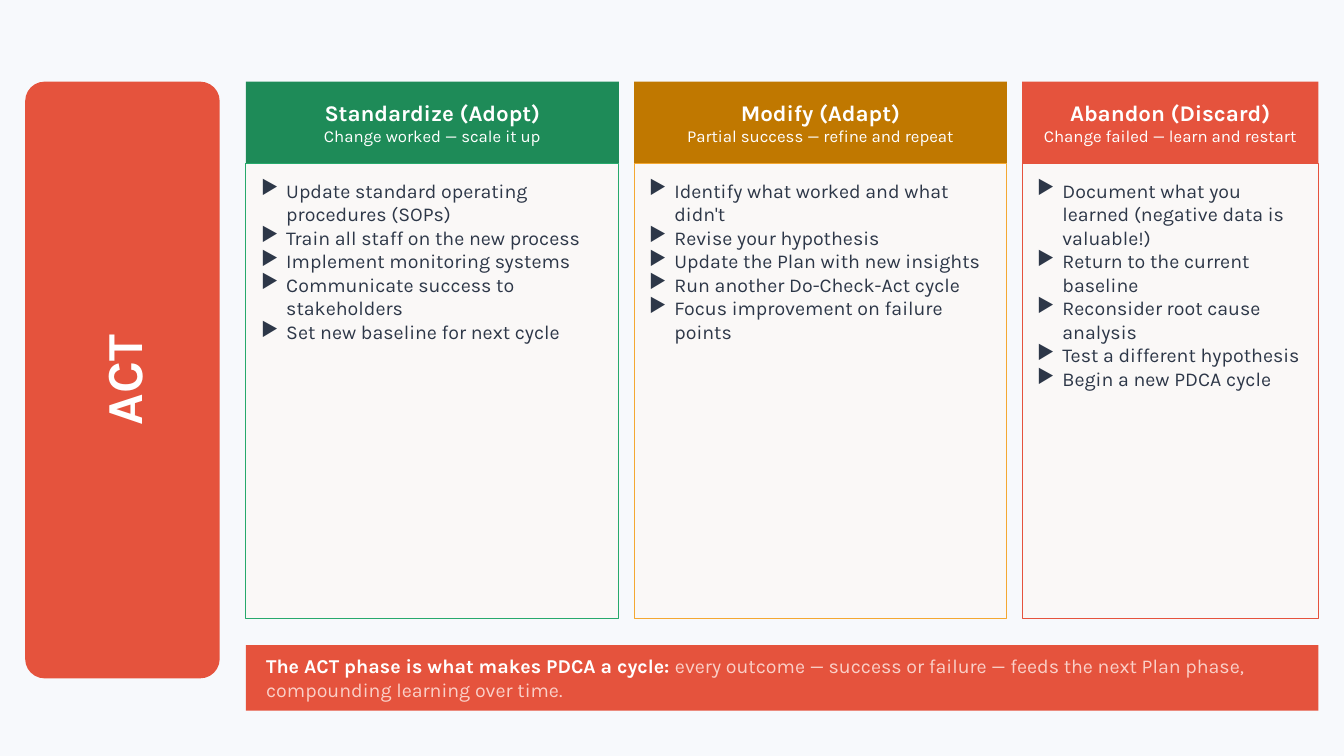
import pptx
import pptx.dml.color
import pptx.enum.shapes
import pptx.enum.text
import pptx.oxml.ns
import pptx.util
from lxml import etree

Pt = pptx.util.Pt
SHAPES = pptx.enum.shapes.MSO_SHAPE
ALIGN = pptx.enum.text.PP_ALIGN
ANCHOR = pptx.enum.text.MSO_ANCHOR

RED, WHITE, INK, PANEL = "E5533D", "FFFFFF", "2D3748", "FAF8F7"
TOP, HEADER_HEIGHT, BODY_HEIGHT = 58.32, 58.32, 325.44
COLUMN_LEFT, COLUMN_GAP, RIGHT_EDGE = 175.68, 10.8, 941.76


def add_box(kind, bounds, fill, margins, anchor, line=None):
    """Add a filled shape; margins are (horizontal, vertical)."""
    box = slide.shapes.add_shape(kind, *[Pt(value) for value in bounds])
    box.shadow.inherit = False
    box.fill.solid()
    box.fill.fore_color.rgb = pptx.dml.color.RGBColor.from_string(fill)
    if line:
        box.line.color.rgb = pptx.dml.color.RGBColor.from_string(line)
        box.line.width = Pt(0.72)
    else:
        box.line.fill.background()
    across, down = margins
    frame_format = {
        "margin_left": Pt(across), "margin_right": Pt(across),
        "margin_top": Pt(down), "margin_bottom": Pt(down),
        "vertical_anchor": anchor, "word_wrap": True,
    }
    for name, value in frame_format.items():
        setattr(box.text_frame, name, value)
    return box


def add_span(para, text, size, color, bold=False):
    span = para.add_run()
    span.text = text
    for name, value in {"name": "Karla", "size": Pt(size), "bold": bold}.items():
        setattr(span.font, name, value)
    span.font.color.rgb = pptx.dml.color.RGBColor.from_string(color)


deck = pptx.Presentation()
deck.slide_width, deck.slide_height = Pt(960), Pt(540)
slide = deck.slides.add_slide(deck.slide_layouts[6])
slide.background.fill.solid()
slide.background.fill.fore_color.rgb = pptx.dml.color.RGBColor.from_string("F7F9FC")

# Phase label
phase = add_box(SHAPES.ROUNDED_RECTANGLE, (18, TOP, 138.96, 426.24), RED, (0, 0), ANCHOR.MIDDLE)
phase.adjustments[0] = 0.1
phase.text_frame._txBody.bodyPr.set("vert", "vert270")
para = phase.text_frame.paragraphs[0]
para.alignment = ALIGN.CENTER
add_span(para, "ACT", 36, WHITE, True)

# Outcome columns: title, subtitle, header fill, border, width, actions
outcomes = [
    ("Standardize (Adopt)", "Change worked — scale it up", "1E8B58", "27A96C", 266.4, [
        "Update standard operating procedures (SOPs)",
        "Train all staff on the new process",
        "Implement monitoring systems",
        "Communicate success to stakeholders",
        "Set new baseline for next cycle",
    ]),
    ("Modify (Adapt)", "Partial success — refine and repeat", "C07800", "F4A832", 266.4, [
        "Identify what worked and what didn't",
        "Revise your hypothesis",
        "Update the Plan with new insights",
        "Run another Do-Check-Act cycle",
        "Focus improvement on failure points",
    ]),
    ("Abandon (Discard)", "Change failed — learn and restart", RED, RED, 211.68, [
        "Document what you learned (negative data is valuable!)",
        "Return to the current baseline",
        "Reconsider root cause analysis",
        "Test a different hypothesis",
        "Begin a new PDCA cycle",
    ]),
]
left = COLUMN_LEFT
for title, subtitle, header_fill, border, width, actions in outcomes:
    header = add_box(SHAPES.RECTANGLE, (left, TOP, width, HEADER_HEIGHT),
                     header_fill, (7.2, 0), ANCHOR.MIDDLE)
    frame = header.text_frame
    title_para, subtitle_para = frame.paragraphs[0], frame.add_paragraph()
    title_para.alignment = subtitle_para.alignment = ALIGN.CENTER
    add_span(title_para, title, 16, WHITE, True)
    add_span(subtitle_para, subtitle, 12, WHITE)

    body = add_box(SHAPES.RECTANGLE, (left, TOP + HEADER_HEIGHT, width, BODY_HEIGHT),
                   PANEL, (10.8, 10.8), ANCHOR.TOP, border)
    frame = body.text_frame
    for index, action in enumerate(actions):
        para = frame.add_paragraph() if index else frame.paragraphs[0]
        para.alignment = ALIGN.LEFT
        properties = para._p.get_or_add_pPr()
        properties.set("marL", str(Pt(18)))
        properties.set("indent", str(-Pt(18)))
        bullet = etree.SubElement(properties, pptx.oxml.ns.qn("a:buChar"))
        bullet.set("char", "▶")
        add_span(para, action, 14, INK)
    left += width + COLUMN_GAP

# Takeaway banner
banner = add_box(SHAPES.RECTANGLE, (COLUMN_LEFT, 460.8, RIGHT_EDGE - COLUMN_LEFT, 46.8),
                 RED, (14.4, 0), ANCHOR.MIDDLE)
para = banner.text_frame.paragraphs[0]
para.alignment = ALIGN.LEFT
add_span(para, "The ACT phase is what makes PDCA a cycle: ", 14, WHITE, True)
add_span(para, "every outcome — success or failure — feeds the next Plan phase, "
         "compounding learning over time.", 14, "FAD0C8")

deck.save("out.pptx")
